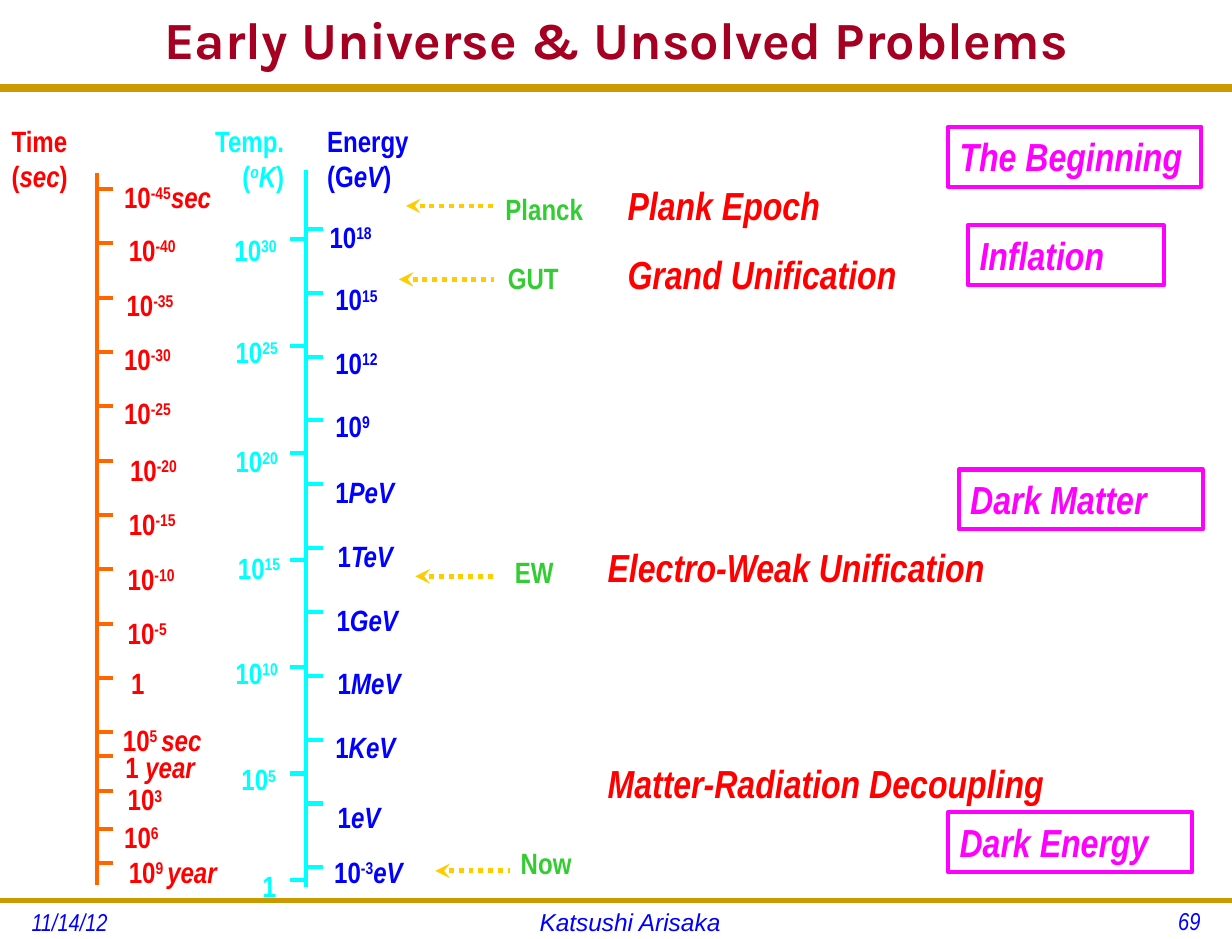
from typing import Any, NamedTuple

from lxml import etree
from pptx import Presentation
from pptx.dml.color import RGBColor
from pptx.enum.dml import MSO_LINE
from pptx.enum.shapes import MSO_CONNECTOR, MSO_SHAPE
from pptx.enum.text import MSO_ANCHOR, MSO_AUTO_SIZE, PP_ALIGN
from pptx.oxml.ns import qn
from pptx.util import Inches, Pt

STRAIGHT = MSO_CONNECTOR.STRAIGHT
RECTANGLE = MSO_SHAPE.RECTANGLE
LEFT, CENTER, RIGHT = PP_ALIGN.LEFT, PP_ALIGN.CENTER, PP_ALIGN.RIGHT
MIDDLE = MSO_ANCHOR.MIDDLE
GROW = MSO_AUTO_SIZE.SHAPE_TO_FIT_TEXT
DOTTED = MSO_LINE.ROUND_DOT

GOLD = RGBColor(0xCC, 0x99, 0x00)
YELLOW = RGBColor(0xFF, 0xCC, 0x00)
CRIMSON = RGBColor(0xA5, 0x00, 0x21)
ORANGE = RGBColor(0xFF, 0x66, 0x00)
RED = RGBColor(0xFF, 0x00, 0x00)
CYAN = RGBColor(0x00, 0xFF, 0xFF)
BLUE = RGBColor(0x00, 0x00, 0xFF)
GREEN = RGBColor(0x33, 0xCC, 0x33)
MAGENTA = RGBColor(0xFF, 0x00, 0xFF)

WIDTH, HEIGHT = Inches(10.5), Inches(8)
COLUMNS, ROWS = 105, 80
TICK_LENGTH = 1.4
NARROW = "Arial Narrow"

LABEL = {"name": NARROW, "size": Pt(18), "bold": True}
HEADING = {"name": NARROW, "size": Pt(24), "bold": True, "italic": True}
FOOTER = {"name": NARROW, "size": Pt(15), "italic": True}
TITLE = {"name": "Karla", "size": Pt(32), "bold": True}


class Area(NamedTuple):
    column: float
    row: float
    columns: float
    rows: float = 4


class Label(NamedTuple):
    area: Area
    markup: str


class Axis(NamedTuple):
    column: float
    top: float
    bottom: float
    color: RGBColor


class Era(NamedTuple):
    label: Label
    arrow_start: float
    arrow_end: float
    arrow_row: float


def across(columns: float) -> int:
    return round(WIDTH * columns / COLUMNS)


def down(rows: float) -> int:
    return round(HEIGHT * rows / ROWS)


def place(area: Area) -> tuple[int, int, int, int]:
    return across(area.column), down(area.row), across(area.columns), down(area.rows)


def even_rows(first: float, last: float, count: int) -> list[float]:
    return [first + (last - first) * index / (count - 1) for index in range(count)]


def write(shape: Any, markup: str, color: RGBColor, style: dict[str, Any],
          alignment: Any = LEFT) -> None:
    frame = shape.text_frame
    frame.word_wrap = True
    for index, line in enumerate(markup.split("\n")):
        paragraph = frame.add_paragraph() if index else frame.paragraphs[0]
        paragraph.alignment = alignment
        for part in line.split("|"):
            run = paragraph.add_run()
            run.text = part.lstrip("^/")
            for name, value in style.items():
                setattr(run.font, name, value)
            run.font.color.rgb = color
            if part.startswith(("/", "^/")):
                run.font.italic = True
            if part.startswith("^"):
                run.font._element.set("baseline", "30000")


def add_text(slide: Any, label: Label, color: RGBColor, style: dict[str, Any],
             alignment: Any = LEFT) -> Any:
    shape = slide.shapes.add_textbox(*place(label.area))
    write(shape, label.markup, color, style, alignment)
    return shape


def add_box(slide: Any, label: Label) -> None:
    shape = slide.shapes.add_shape(RECTANGLE, *place(label.area))
    shape.shadow.inherit = False
    shape.fill.background()
    shape.line.color.rgb = MAGENTA
    shape.line.width = Pt(2.5)
    write(shape, label.markup, MAGENTA, HEADING)
    shape.text_frame.auto_size = GROW
    shape.text_frame.vertical_anchor = MSO_ANCHOR.TOP


def add_line(slide: Any, start: tuple[float, float], end: tuple[float, float],
             color: RGBColor, width: float = 2.5) -> Any:
    line = slide.shapes.add_connector(STRAIGHT, across(start[0]), down(start[1]),
                                      across(end[0]), down(end[1]))
    line.line.color.rgb = color
    line.line.width = Pt(width)
    etree.SubElement(line._element.spPr, qn("a:effectLst"))
    return line


def add_axis(slide: Any, axis: Axis) -> None:
    add_line(slide, (axis.column, axis.top), (axis.column, axis.bottom), axis.color)


def add_ticks(slide: Any, axis: Axis, rows: list[float], length: float) -> None:
    for row in rows:
        add_line(slide, (axis.column, row), (axis.column + length, row), axis.color)


def add_era(slide: Any, era: Era) -> None:
    arrow = add_line(slide, (era.arrow_start, era.arrow_row),
                     (era.arrow_end, era.arrow_row), YELLOW, 3)
    arrow.line.dash_style = DOTTED
    etree.SubElement(arrow.line._get_or_add_ln(), qn("a:headEnd"), type="stealth")
    add_text(slide, era.label, GREEN, LABEL)


TIME_AXIS = Axis(8.25, 14.7, 75.4, ORANGE)
ENERGY_AXIS = Axis(26.1, 14.5, 75.6, CYAN)
TIME_TICKS = even_rows(16.1, 62.4, 11) + [64.4, 67.4, 70.6, 73.5]
ENERGY_TICKS = even_rows(19.5, 73.9, 11)
TEMPERATURE_TICKS = even_rows(20.4, 75, 7)

TIME_LABELS = [
    Label(Area(9.6, 14.8, 12), "10|^-45|/sec"), Label(Area(10, 19.3, 8), "10|^-40"),
    Label(Area(9.8, 24, 9.5), "10|^-35"), Label(Area(9.6, 28.6, 8.4), "10|^-30"),
    Label(Area(9.6, 33.2, 9.6), "10|^-25"), Label(Area(10.1, 38, 9.1), "10|^-20"),
    Label(Area(10, 42.6, 8), "10|^-15"), Label(Area(9.9, 47.3, 9.3), "10|^-10"),
    Label(Area(9.9, 51.9, 9.4), "10|^-5"), Label(Area(10.2, 56.2, 7.1), "1"),
    Label(Area(9.5, 61, 11.3), "10|^5 |/sec"), Label(Area(9.7, 63.3, 11.3), "1 |/year"),
    Label(Area(9.9, 66.1, 7.1), "10|^3"), Label(Area(9.6, 69.3, 7.1), "10|^6"),
    Label(Area(10, 72.3, 15.8), "10|^9 |/year"),
    Label(Area(0, 10, 9.2, 7), "Time\n(|/sec|)"),
]
ENERGY_LABELS = [
    Label(Area(27.1, 18.2, 12.9), "10|^18"), Label(Area(27.6, 23.5, 7.8), "10|^15"),
    Label(Area(27.6, 28.9, 7.8), "10|^12"), Label(Area(27.6, 34.3, 7.8), "10|^9"),
    Label(Area(27.6, 39.9, 11), "1|/PeV"), Label(Area(27.8, 45.4, 10.1), "1|/TeV"),
    Label(Area(27.7, 50.8, 10.6), "1|/GeV"), Label(Area(27.8, 56.2, 10.2), "1|/MeV"),
    Label(Area(27.6, 61.6, 10.4), "1|/KeV"), Label(Area(27.8, 67.6, 9.9), "1|/eV"),
    Label(Area(27.5, 72.3, 9.9), "10|^-3|/eV"),
    Label(Area(26.9, 10, 11.3, 7), "Energy (G|/eV|)"),
]
TEMPERATURE_LABELS = [
    Label(Area(19, 19.3, 8.1), "10|^30"), Label(Area(19.1, 28, 8), "10|^25"),
    Label(Area(19.1, 37.3, 8), "10|^20"), Label(Area(19.3, 46.4, 7.8), "10|^15"),
    Label(Area(19.1, 55.3, 6.8), "10|^10"), Label(Area(19.6, 64.4, 6.7), "10|^5"),
    Label(Area(21.4, 73.5, 4.2), "1"),
]
TEMPERATURE_HEADING = Label(Area(16, 10, 9.2, 7), "Temp.\n(|^/o|/K|)")
ERAS = [
    Era(Label(Area(42.1, 15.8, 10.4), "Planck"), 34.6, 42.1, 17.55),
    Era(Label(Area(42.3, 21.7, 9.8), "GUT"), 34, 42.1, 23.8),
    Era(Label(Area(42.9, 46.7, 7.5), "EW"), 35.4, 42.1, 49.1),
    Era(Label(Area(43.4, 71.5, 8.7), "Now"), 37.1, 43.5, 74.2),
]
EPOCHS = [
    Label(Area(52.5, 15, 32.3, 5), "Plank Epoch"),
    Label(Area(52.5, 20.8, 32.3, 5), "Grand Unification"),
    Label(Area(50.8, 45.8, 45, 5), "Electro-Weak Unification"),
    Label(Area(50.8, 64.2, 48.3, 5), "Matter-Radiation Decoupling"),
]
PROBLEMS = [
    Label(Area(80.8, 10.8, 21.6, 5.1), "The Beginning"),
    Label(Area(82.5, 19.2, 16.7, 5.1), "Inflation"),
    Label(Area(81.7, 40, 20.8, 5.1), "Dark Matter"),
    Label(Area(80.8, 69.2, 20.8, 5.1), "Dark Energy"),
]


def main() -> None:
    presentation = Presentation()
    presentation.slide_width, presentation.slide_height = WIDTH, HEIGHT
    slide = presentation.slides.add_slide(presentation.slide_layouts[6])

    for row, width in ((7.5, 4.5), (76.7, 3)):
        add_line(slide, (0, row), (COLUMNS, row), GOLD, width)
    add_text(slide, Label(Area(1.7, 76.8, 20.8, 3.2), "11/14/12"), BLUE, FOOTER)
    add_text(slide, Label(Area(23.3, 76.8, 60.8, 3.2), "Katsushi Arisaka"), BLUE,
             {**FOOTER, "name": "Arial"}, CENTER)
    add_text(slide, Label(Area(85, 76.7, 18.3, 3.3), "69"), BLUE, FOOTER, RIGHT)
    title = add_text(slide, Label(Area(1.7, 0, 101.7, 7.5), "Early Universe & Unsolved Problems"),
                     CRIMSON, TITLE, CENTER)
    title.text_frame.vertical_anchor = MIDDLE
    title.text_frame.paragraphs[0].line_spacing = 0.8

    for axis in (TIME_AXIS, ENERGY_AXIS):
        add_axis(slide, axis)
    add_ticks(slide, TIME_AXIS, TIME_TICKS, TICK_LENGTH)
    add_ticks(slide, ENERGY_AXIS, ENERGY_TICKS, TICK_LENGTH)
    add_ticks(slide, ENERGY_AXIS, TEMPERATURE_TICKS, -TICK_LENGTH)
    for labels, color in ((TIME_LABELS, RED), (ENERGY_LABELS, BLUE), (TEMPERATURE_LABELS, CYAN)):
        for label in labels:
            add_text(slide, label, color, LABEL)
    add_text(slide, TEMPERATURE_HEADING, CYAN, LABEL, RIGHT)

    for era in ERAS:
        add_era(slide, era)
    for epoch in EPOCHS:
        add_text(slide, epoch, RED, HEADING)
    for problem in PROBLEMS:
        add_box(slide, problem)
    presentation.save("out.pptx")


if __name__ == "__main__":
    main()
